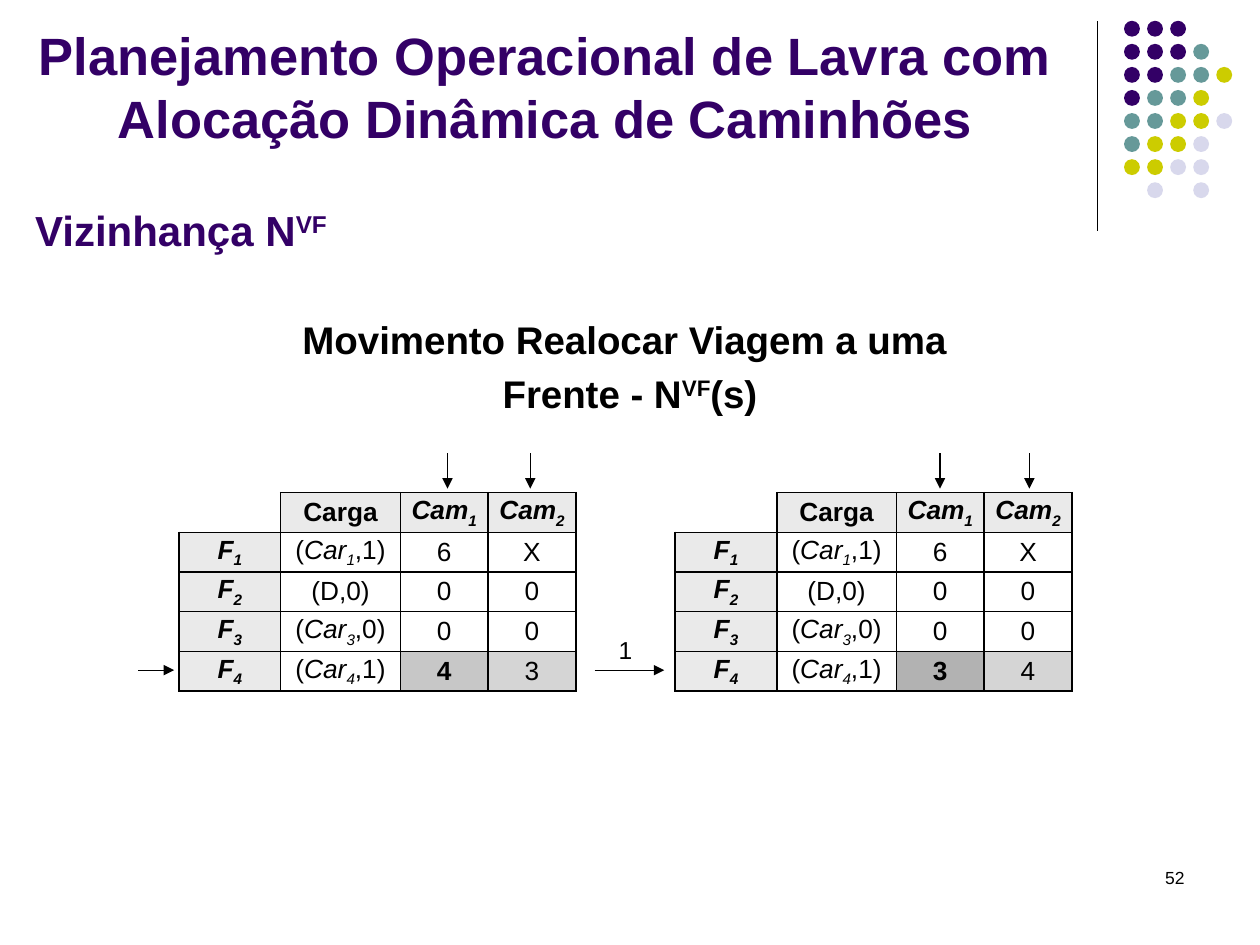
from lxml import etree
from pptx import Presentation
from pptx.dml.color import RGBColor
from pptx.enum.shapes import MSO_CONNECTOR, MSO_SHAPE
from pptx.enum.text import MSO_ANCHOR, PP_ALIGN
from pptx.oxml.ns import qn
from pptx.util import Cm, Pt

LEFT, CENTER, RIGHT = PP_ALIGN.LEFT, PP_ALIGN.CENTER, PP_ALIGN.RIGHT
TOP, MIDDLE = MSO_ANCHOR.TOP, MSO_ANCHOR.MIDDLE
STRAIGHT = MSO_CONNECTOR.STRAIGHT
OVAL = MSO_SHAPE.OVAL

COLORS = {
    "ink": "000000", "purple": "330066", "teal": "669999", "lime": "CCCC00",
    "mist": "D8D8EC", "header": "EAEAEA", "source": "C7C7C7",
    "target": "D5D5D5", "changed": "B2B2B2",
}
BASELINES = {"super": "30000", "sub": "-25000"}
DOT_COLORS = {"p": "purple", "t": "teal", "l": "lime", "m": "mist"}
DOT_ROWS = ["ppp", "pppt", "ppttl", "pttl", "ttllm", "tllm", "llmm", " m m"]
DOT_PITCH, DOT_SIZE = 0.465, 0.32

COLUMN_WIDTHS = [2.05, 2.41, 1.77, 1.77]
ROW_HEIGHT = 0.8
LOADS = [("Car", "1", ",1)"), None, ("Car", "3", ",0)"), ("Car", "4", ",1)")]
TRIPS = [("6", "X"), ("0", "0"), ("0", "0")]


def rgb(name):
    return RGBColor.from_string(COLORS[name])


def write_runs(para, runs, size, color="ink", **formats):
    for text, *styles in runs:
        span = para.add_run()
        span.text = text
        values = {"name": "Arial", "size": Pt(size), **formats}
        values.update({style: True for style in styles if style not in BASELINES})
        for attribute, value in values.items():
            setattr(span.font, attribute, value)
        span.font.color.rgb = rgb(color)
        for style in styles:
            if style in BASELINES:
                span._r.get_or_add_rPr().set("baseline", BASELINES[style])


def add_text(page, box, lines, size, align=LEFT, anchor=TOP, wrap=True,
             space=0, **formats):
    frame = page.shapes.add_textbox(*map(Cm, box)).text_frame
    frame.word_wrap = wrap
    frame.vertical_anchor = anchor
    for index, runs in enumerate(lines):
        para = frame.add_paragraph() if index else frame.paragraphs[0]
        para.alignment = align
        para.space_before = Pt(space)
        write_runs(para, runs, size, **formats)


def add_line(page, start, end, arrow=False):
    line = page.shapes.add_connector(STRAIGHT, *map(Cm, (*start, *end)))
    line.line.color.rgb = rgb("ink")
    line.line.width = Pt(0.75)
    if arrow:
        stroke = line.line._get_or_add_ln()
        etree.SubElement(stroke, qn("a:tailEnd"), type="triangle")
    etree.SubElement(line._element.spPr, qn("a:effectLst"))


def add_dots(page, left, top):
    group = page.shapes.add_group_shape()
    for row, pattern in enumerate(DOT_ROWS):
        for column, key in enumerate(pattern):
            if key == " ":
                continue
            place = left + column * DOT_PITCH, top + row * DOT_PITCH
            dot = group.shapes.add_shape(OVAL, *map(Cm, (*place, DOT_SIZE, DOT_SIZE)))
            dot.shadow.inherit = False
            dot.fill.solid()
            dot.fill.fore_color.rgb = rgb(DOT_COLORS[key])
            dot.line.fill.background()


def draw_borders(cell, visible):
    properties = cell._tc.get_or_add_tcPr()
    for side in "LRTB":
        border = etree.SubElement(properties, qn(f"a:ln{side}"), w=str(Pt(1)))
        if side in visible:
            fill = etree.SubElement(border, qn("a:solidFill"))
            etree.SubElement(fill, qn("a:srgbClr"), val=COLORS["ink"])
        else:
            etree.SubElement(border, qn("a:noFill"))


def solution_rows(last_trips):
    rows = [[[], [("Carga", "bold")]]
            + [[("Cam", "bold", "italic"), (n, "bold", "italic", "sub")] for n in "12"]]
    for number, (load, trips) in enumerate(zip(LOADS, TRIPS + [last_trips]), 1):
        front = [("F", "bold", "italic"), (str(number), "bold", "italic", "sub")]
        charge = [("(D,0)",)]
        if load:
            name, index, ending = load
            charge = [("(",), (name, "italic"), (index, "italic", "sub"), (ending,)]
        rows.append([front, charge] + [[(trip,)] for trip in trips])
    rows[-1][2] = [(last_trips[0], "bold")]
    return rows


def add_solution(page, left, top, last_trips, highlight, arrow_offsets, trip_arrow):
    rows = solution_rows(last_trips)
    box = left, top, sum(COLUMN_WIDTHS), ROW_HEIGHT * len(rows)
    table = page.shapes.add_table(len(rows), len(COLUMN_WIDTHS), *map(Cm, box)).table
    for column, width in zip(table.columns, COLUMN_WIDTHS):
        column.width = Cm(width)
    fills = {(4, 2): highlight, (4, 3): "target"}
    for r, row in enumerate(rows):
        for c, runs in enumerate(row):
            cell = table.cell(r, c)
            for side in ("left", "right", "top", "bottom"):
                setattr(cell, f"margin_{side}", 0)
            cell.vertical_anchor = MIDDLE
            draw_borders(cell, "LRTB" if runs else "RB")
            fill = fills.get((r, c), "header" if runs and 0 in (r, c) else None)
            if fill:
                cell.fill.solid()
                cell.fill.fore_color.rgb = rgb(fill)
            else:
                cell.fill.background()
            para = cell.text_frame.paragraphs[0]
            para.alignment = CENTER
            para.space_before = Pt(3)
            write_runs(para, runs, 15)
    for offset in arrow_offsets:
        add_line(page, (left + offset, top - 0.79), (left + offset, top - 0.08), True)
    start, end = trip_arrow
    add_line(page, (left + start, top + 3.58), (left + end, top + 3.58), True)


def main():
    deck = Presentation()
    deck.slide_width, deck.slide_height = Cm(25.4), Cm(19.05)
    page = deck.slides.add_slide(deck.slide_layouts[6])
    add_line(page, (22.12, 0.43), (22.12, 4.65))
    add_dots(page, 22.66, 0.42)
    add_text(page, (18.21, 17.35, 5.92, 1.27), [[("52",)]], 10, align=RIGHT)
    add_text(page, (0, 6.25, 25.4, 1.47),
             [[("Movimento Realocar Viagem a uma ",)],
              [("Frente - N",), ("VF", "super"), ("(s)",)]],
             22, align=CENTER, space=4.4, bold=True)
    add_solution(page, 3.61, 9.93, ("4", "3"), "source", (5.41, 7.08), (-0.82, -0.1))
    add_solution(page, 13.61, 9.93, ("3", "4"), "changed", (5.34, 7.14), (-1.62, -0.22))
    add_text(page, (12.22, 12.67, 0.79, 0.84), [[("1",)]], 14, wrap=False)
    add_text(page, (0.46, 3.99, 21.41, 1.55),
             [[("Vizinhança N",), ("VF", "super")]], 24, color="purple", bold=True)
    add_text(page, (0.51, 0.33, 20.96, 2.79),
             [[("Planejamento Operacional de Lavra com Alocação Dinâmica de Caminhões",)]],
             30, align=CENTER, anchor=MIDDLE, color="purple", bold=True)
    deck.save("out.pptx")


if __name__ == "__main__":
    main()
